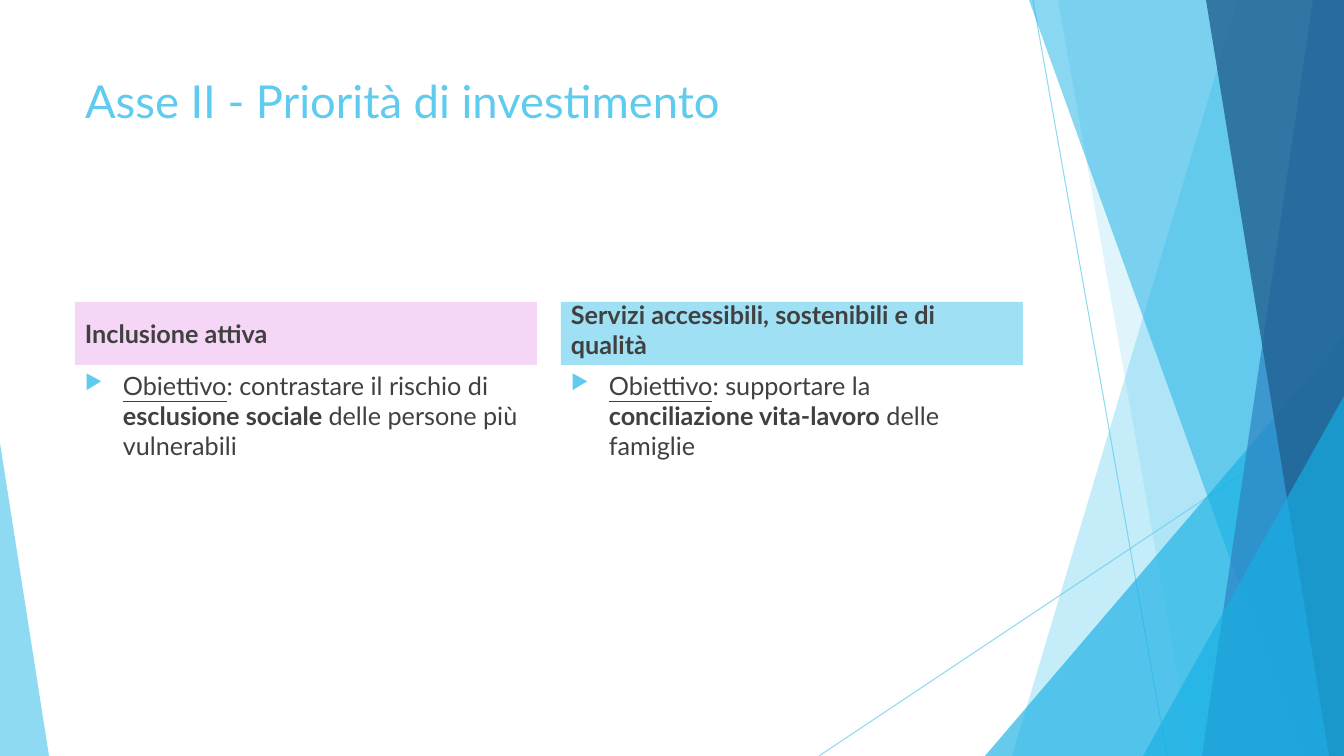
from dataclasses import dataclass

from lxml.etree import SubElement
from pptx import Presentation
from pptx.dml.color import RGBColor
from pptx.enum.shapes import MSO_CONNECTOR as Link, MSO_SHAPE as Shape
from pptx.enum.text import MSO_ANCHOR as Anchor, MSO_AUTO_SIZE as Fit, PP_ALIGN as Align
from pptx.oxml.ns import qn
from pptx.util import Pt

WIDE, HIGH = 1344, 756
SCALE = 914400 / 100.8


@dataclass(frozen=True)
class Theme:
    font: str = "Lato"
    sky: str = "5FCBEF"
    cyan: str = "17B0E4"
    blue: str = "2E83C3"
    navy: str = "226292"
    pink: str = "CC00CC"
    pale: str = "9FE0F5"
    ink: str = "404040"
    head: float = 32.4
    body: float = 18
    gap: float = 10
    line: float = 0.75


T = Theme()

TITLE = "Asse II - Priorità di investimento"
# header, fill, opacity, anchor, body runs as (text, style)
COLS = [
    ("Inclusione attiva", T.pink, 16, Anchor.MIDDLE,
     [("Obiettivo", "u"), (": contrastare il rischio di ", ""),
      ("esclusione sociale ", "b"), ("delle persone più vulnerabili", "")]),
    ("Servizi accessibili, sostenibili e di qualità", T.pale, 100, Anchor.BOTTOM,
     [("Obiettivo", "u"), (": supportare la", ""),
      (" conciliazione vita-lavoro", "b"), (" delle famiglie", "")]),
]
LINES = [(1033, 0, 1167, HIGH), (WIDE, 406, 819, HIGH)]
# bands reach the right edge: top x, bottom x, colour, opacity
# wedges reach the bottom edge: left, top, width, peak, colour, opacity
DECOR = [
    ("band", 1238, 1012, T.sky, 36),
    ("band", 1058, 1192, T.sky, 20),
    ("wedge", 985, 336, 359, 1, T.cyan, 66),
    ("band", 1029, 1301, T.cyan, 50),
    ("band", 1313, 1202, T.blue, 70),
    ("band", 1206, 1329, T.navy, 80),
    ("wedge", 1143, 396, 201, 1, T.cyan, 66),
    ("wedge", 0, 443, 49, 0, T.sky, 70),
]
LEFT, TOP, COL, STEP = 75, 302, 462, 486
BAR, BODY, INDENT = 63, 364, 38


def px(*nums):
    return [round(n * SCALE) for n in nums]


def fade(fill, color, alpha):
    """Give a solid fill its colour and its opacity in percent."""
    fill.solid()
    fill.fore_color.rgb = RGBColor.from_string(color)
    if alpha < 100:
        tint = fill._xPr.find(".//" + qn("a:srgbClr"))
        SubElement(tint, qn("a:alpha"), val=str(alpha * 1000))


def paint(shape, color, alpha):
    shape.shadow.inherit = False
    shape.line.fill.background()
    fade(shape.fill, color, alpha)


def stroke(shapes, ends):
    line = shapes.add_connector(Link.STRAIGHT, *px(*ends))
    line.line.width = Pt(T.line)
    fade(line.line.fill, T.sky, 70)
    SubElement(line._element.spPr, qn("a:effectLst"))


def band(shapes, top, foot, color, alpha):
    path = shapes.build_freeform(top, 0, scale=SCALE)
    path.add_line_segments([(WIDE, 0), (WIDE, HIGH), (foot, HIGH)], close=True)
    paint(path.convert_to_shape(), color, alpha)


def wedge(shapes, x, y, w, peak, color, alpha):
    part = shapes.add_shape(Shape.ISOSCELES_TRIANGLE, *px(x, y, w, HIGH - y))
    part.adjustments[0] = peak
    paint(part, color, alpha)


def write(shape, runs, size, color, anchor=Anchor.TOP):
    frame = shape.text_frame
    frame.word_wrap = True
    frame.auto_size = Fit.NONE
    frame.vertical_anchor = anchor
    para = frame.paragraphs[0]
    para.alignment = Align.LEFT
    for text, style in runs:
        run = para.add_run()
        run.text = text
        font = run.font
        font.name, font.size = T.font, Pt(size)
        font.color.rgb = RGBColor.from_string(color)
        font.bold = style == "b"
        font.underline = style == "u"
    return para


def bullet(para):
    props = para._p.get_or_add_pPr()
    indent, = px(INDENT)
    props.set("marL", str(indent))
    props.set("indent", str(-indent))
    SubElement(SubElement(props, qn("a:buClr")), qn("a:srgbClr"), val=T.sky)
    SubElement(props, qn("a:buSzPct"), val="80000")
    SubElement(props, qn("a:buChar"), char="▶")


def column(shapes, x, head, color, alpha, anchor, runs):
    bar = shapes.add_shape(Shape.RECTANGLE, *px(x, TOP, COL, BAR))
    paint(bar, color, alpha)
    write(bar, [(head, "b")], T.body, T.ink, anchor)
    box = shapes.add_textbox(*px(x, TOP + BAR, COL, BODY))
    bullet(write(box, runs, T.body, T.ink))


def main():
    deck = Presentation()
    deck.slide_width, deck.slide_height = px(WIDE, HIGH)
    slide = deck.slides.add_slide(deck.slide_layouts[5])
    shapes = slide.shapes
    for ends in LINES:
        stroke(shapes, ends)
    for kind, *args in DECOR:
        (band if kind == "band" else wedge)(shapes, *args)

    title = shapes.title
    title.left, title.top, title.width, title.height = px(LEFT, 68, 948, 145)
    write(title, [(TITLE, "")], T.head, T.sky)
    title.element.getparent().append(title.element)

    for i, col in enumerate(COLS):
        column(shapes, LEFT + i * STEP, *col)
    deck.save("out.pptx")


if __name__ == "__main__":
    main()
